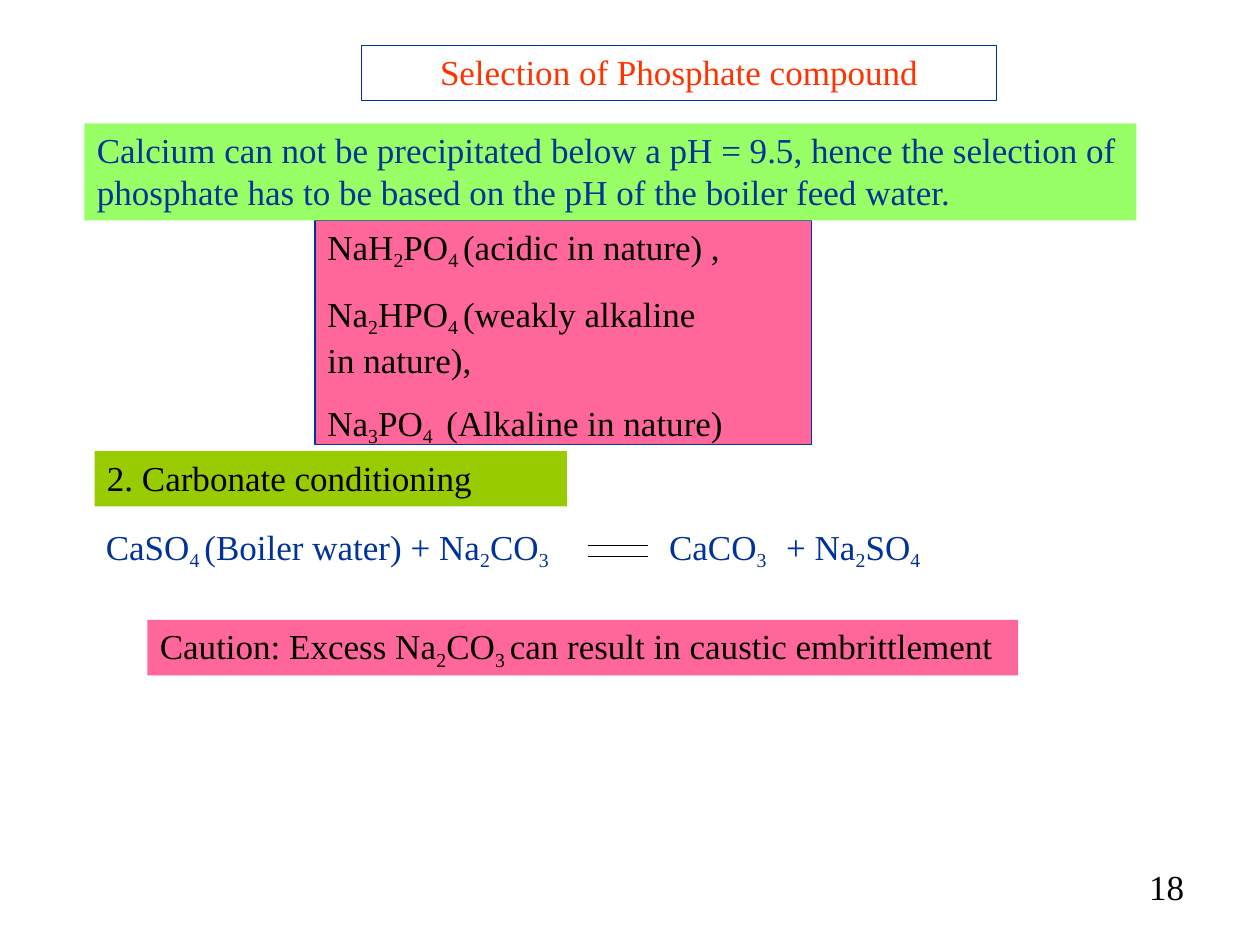
from dataclasses import dataclass

from lxml import etree
from pptx import Presentation
from pptx.dml.color import RGBColor
from pptx.enum.shapes import MSO_CONNECTOR, MSO_SHAPE
from pptx.enum.text import MSO_ANCHOR, PP_ALIGN
from pptx.oxml.ns import qn
from pptx.util import Inches, Pt

RECT = MSO_SHAPE.RECTANGLE
STRAIGHT = MSO_CONNECTOR.STRAIGHT
TOP = MSO_ANCHOR.TOP
LEFT, CENTER = PP_ALIGN.LEFT, PP_ALIGN.CENTER


@dataclass(frozen=True)
class Theme:
    font: str = "Times New Roman"
    size: float = 20
    sub_size: float = 19.5
    sub_baseline: int = -21000
    line_width: float = 0.72
    black: str = "000000"
    navy: str = "003399"
    red: str = "FF3300"
    pink: str = "FF6699"
    lime: str = "99FF66"
    olive: str = "99CC00"


class Deck:
    def __init__(self, theme, s):
        self.theme = theme
        self.s = s

    def paragraph(self, p, text, color, before, align):
        p.alignment = align
        p.space_before = Pt(before)
        for i, line in enumerate(text.split("\n")):
            if i:
                p.add_line_break()
            for j, part in enumerate(line.split("_")):
                if part:
                    self.run(p, part, color, sub=j % 2 == 1)

    def run(self, p, text, color, sub):
        r = p.add_run()
        r.text = text
        r.font.name = self.theme.font
        r.font.size = Pt(self.theme.sub_size if sub else self.theme.size)
        r.font.color.rgb = RGBColor.from_string(color)
        if sub:
            r._r.get_or_add_rPr().set("baseline", str(self.theme.sub_baseline))

    def fill_text(self, sp, texts, color, left, top, befores, align=LEFT):
        tf = sp.text_frame
        tf.word_wrap = True
        tf.vertical_anchor = TOP
        tf.margin_left, tf.margin_top = Inches(left), Inches(top)
        tf.margin_right = tf.margin_bottom = 0
        for i, (text, before) in enumerate(zip(texts, befores)):
            p = tf.add_paragraph() if i else tf.paragraphs[0]
            self.paragraph(p, text, color, before, align)

    def box(self, at, texts, color, fill=None, line=None, align=LEFT, gap=0):
        sp = self.s.shapes.add_shape(RECT, *map(Inches, at))
        sp.shadow.inherit = False
        if fill:
            sp.fill.solid()
            sp.fill.fore_color.rgb = RGBColor.from_string(fill)
        else:
            sp.fill.background()
        if line:
            sp.line.color.rgb = RGBColor.from_string(line)
            sp.line.width = Pt(self.theme.line_width)
        else:
            sp.line.fill.background()
        befores = [3] + [gap] * (len(texts) - 1)
        inset = 0 if align == CENTER else 0.1
        self.fill_text(sp, texts, color, inset, 0.04, befores, align)

    def label(self, at, text, color, tabs=()):
        sp = self.s.shapes.add_textbox(*map(Inches, at))
        self.fill_text(sp, [text], color, 0.01, 0.01, [1])
        if tabs:
            pPr = sp.text_frame.paragraphs[0]._p.get_or_add_pPr()
            tab_list = etree.SubElement(pPr, qn("a:tabLst"))
            for pos in tabs:
                etree.SubElement(tab_list, qn("a:tab"), pos=str(Inches(pos)), algn="l")

    def rule(self, x, y, width):
        c = self.s.shapes.add_connector(
            STRAIGHT, Inches(x), Inches(y), Inches(x + width), Inches(y))
        c.line.color.rgb = RGBColor.from_string(self.theme.black)
        c.line.width = Pt(self.theme.line_width)
        etree.SubElement(c._element.spPr, qn("a:effectLst"))


def main():
    prs = Presentation()
    prs.slide_width, prs.slide_height = Inches(10), Inches(7.5)
    t = Theme()
    deck = Deck(t, prs.slides.add_slide(prs.slide_layouts[6]))

    deck.label((9.11, 6.86, 0.31, 0.36), "18", t.black)
    deck.box((2.5, 1.75, 3.94, 1.78),
             ["NaH_2_PO_4 _(acidic in nature) ,",
              "Na_2_HPO_4 _(weakly alkaline\nin nature),",
              "Na_3_PO_4 _ (Alkaline in nature)"],
             t.black, fill=t.pink, line=t.navy, gap=12)
    deck.box((0.67, 0.98, 8.35, 0.77),
             ["Calcium can not be precipitated below a pH = 9.5, hence the selection of",
              "phosphate has to be based on the pH of the boiler feed water."],
             t.navy, fill=t.lime)
    deck.box((2.87, 0.36, 5.04, 0.44), ["Selection of Phosphate compound"],
             t.red, line=t.navy, align=CENTER)
    deck.box((0.75, 3.58, 3.75, 0.44), ["2. Carbonate conditioning"],
             t.black, fill=t.olive)
    deck.label((0.83, 4.16, 6.51, 0.36),
               "CaSO_4 _(Boiler water) + Na_2_CO_3\t_CaCO_3\t_+ Na_2_SO_4_",
               t.navy, tabs=(4.47, 5.4))
    for y in (4.33, 4.42):
        deck.rule(4.67, y, 0.47)
    deck.box((1.17, 4.92, 6.91, 0.44),
             ["Caution: Excess Na_2_CO_3 _can result in caustic embrittlement"],
             t.black, fill=t.pink)
    prs.save("out.pptx")


if __name__ == "__main__":
    main()
